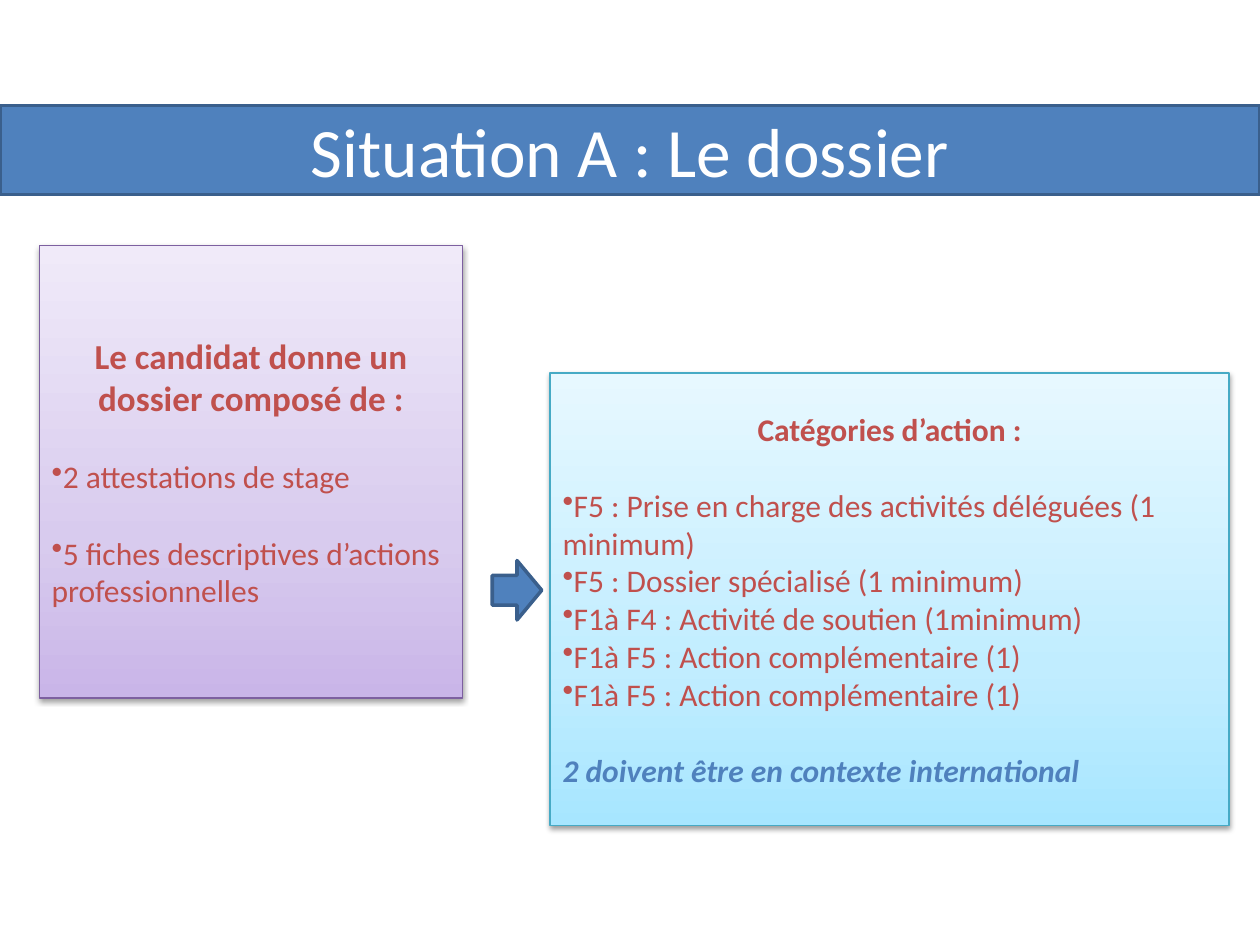
from copy import deepcopy

from lxml import etree
from pptx import Presentation
from pptx.dml.color import RGBColor
from pptx.enum.shapes import MSO_SHAPE
from pptx.enum.text import MSO_ANCHOR, PP_ALIGN
from pptx.oxml.ns import qn
from pptx.util import Pt

RECT, ARROW = MSO_SHAPE.RECTANGLE, MSO_SHAPE.RIGHT_ARROW
LEFT, CENTER, MIDDLE = PP_ALIGN.LEFT, PP_ALIGN.CENTER, MSO_ANCHOR.MIDDLE

WHITE = RGBColor(0xFF, 0xFF, 0xFF)
BLUE = RGBColor(0x4F, 0x81, 0xBD)
DARK_BLUE = RGBColor(0x3A, 0x5F, 0x8C)
RED = RGBColor(0xC0, 0x50, 0x4D)
PURPLE = RGBColor(0x7D, 0x60, 0xA0)
TEAL = RGBColor(0x46, 0xAA, 0xC5)
PURPLES = [RGBColor(0xC9, 0xB5, 0xE8), RGBColor(0xD8, 0xCB, 0xEE), RGBColor(0xF0, 0xEA, 0xF9)]
CYANS = [RGBColor(0xA7, 0xE6, 0xFF), RGBColor(0xC1, 0xED, 0xFF), RGBColor(0xE7, 0xF8, 0xFF)]

GAP = 22  # one line of 18 pt text


def add_box(kind, x, y, w, h, line, width):
    s = slide.shapes.add_shape(kind, Pt(x), Pt(y), Pt(w), Pt(h))
    s.shadow.inherit = False
    s.line.color.rgb = line
    s.line.width = Pt(width)
    s.text_frame.word_wrap = True
    s.text_frame.vertical_anchor = MIDDLE
    return s


def write(p, text, align, before=0, bullet=False, **formats):
    if bullet:
        etree.SubElement(p._p.get_or_add_pPr(), qn("a:buChar"), char="•")
    p.alignment = align
    p.space_before = Pt(before)
    r = p.add_run()
    r.text = text
    r.font.name = "Calibri"
    r.font.color.rgb = formats.pop("color", RED)
    r.font.size = Pt(formats.pop("size", 18))
    for name, value in formats.items():
        setattr(r.font, name, value)


prs = Presentation()
prs.slide_width, prs.slide_height = Pt(720), Pt(540)
slide = prs.slides.add_slide(prs.slide_layouts[6])

# Title band
s = add_box(RECT, 0, 60.3, 720, 51, DARK_BLUE, 2)
s.fill.solid()
s.fill.fore_color.rgb = BLUE
write(s.text_frame.paragraphs[0], "Situation A : Le dossier", CENTER, size=39.6, color=WHITE)

# Gradient panels: place, colours, then paragraphs as text and format
heading = {"align": CENTER, "bold": True}
item = {"align": LEFT, "bullet": True}
first_item = {**item, "before": GAP}
panels = [
    (22.4, 140.4, 242, PURPLE, PURPLES, [
        ("Le candidat donne un dossier composé de :", {**heading, "size": 20}),
        ("2 attestations de stage", first_item),
        ("5 fiches descriptives d’actions professionnelles", first_item),
    ]),
    (314.4, 213.2, 388, TEAL, CYANS, [
        ("Catégories d’action :", heading),
        ("F5 : Prise en charge des activités déléguées (1 minimum)", first_item),
        ("F5 : Dossier spécialisé (1 minimum)", item),
        ("F1à F4 : Activité de soutien (1minimum)", item),
        ("F1à F5 : Action complémentaire (1)", item),
        ("F1à F5 : Action complémentaire (1)", item),
        ("2 doivent être en contexte international",
         {"align": LEFT, "before": GAP, "color": BLUE, "bold": True, "italic": True}),
    ]),
]
for x, y, w, line, colors, paragraphs in panels:
    s = add_box(RECT, x, y, w, 258.5, line, 0.75)

    # Three-stop gradient, running upwards
    s.fill.gradient()
    s.fill.gradient_angle = 90
    stops = s._element.spPr.find(".//" + qn("a:gsLst"))
    stops.insert(1, deepcopy(stops[0]))
    for stop, position, color in zip(s.fill.gradient_stops, (0, 0.35, 1), colors):
        stop.position = position
        stop.color.rgb = color

    # Soft shadow below
    effects = s._element.spPr.find(qn("a:effectLst"))
    shadow = etree.SubElement(effects, qn("a:outerShdw"), blurRad=str(Pt(3.1)),
                              dist=str(Pt(1.6)), dir="5400000", rotWithShape="0")
    black = etree.SubElement(shadow, qn("a:srgbClr"), val="000000")
    etree.SubElement(black, qn("a:alpha"), val="38000")

    tf = s.text_frame
    for i, (text, formats) in enumerate(paragraphs):
        p = tf.add_paragraph() if i else tf.paragraphs[0]
        write(p, text, **formats)

# Arrow between the panels
s = add_box(ARROW, 281.3, 320.3, 28.3, 34, DARK_BLUE, 2)
s.fill.solid()
s.fill.fore_color.rgb = BLUE

prs.save("out.pptx")
